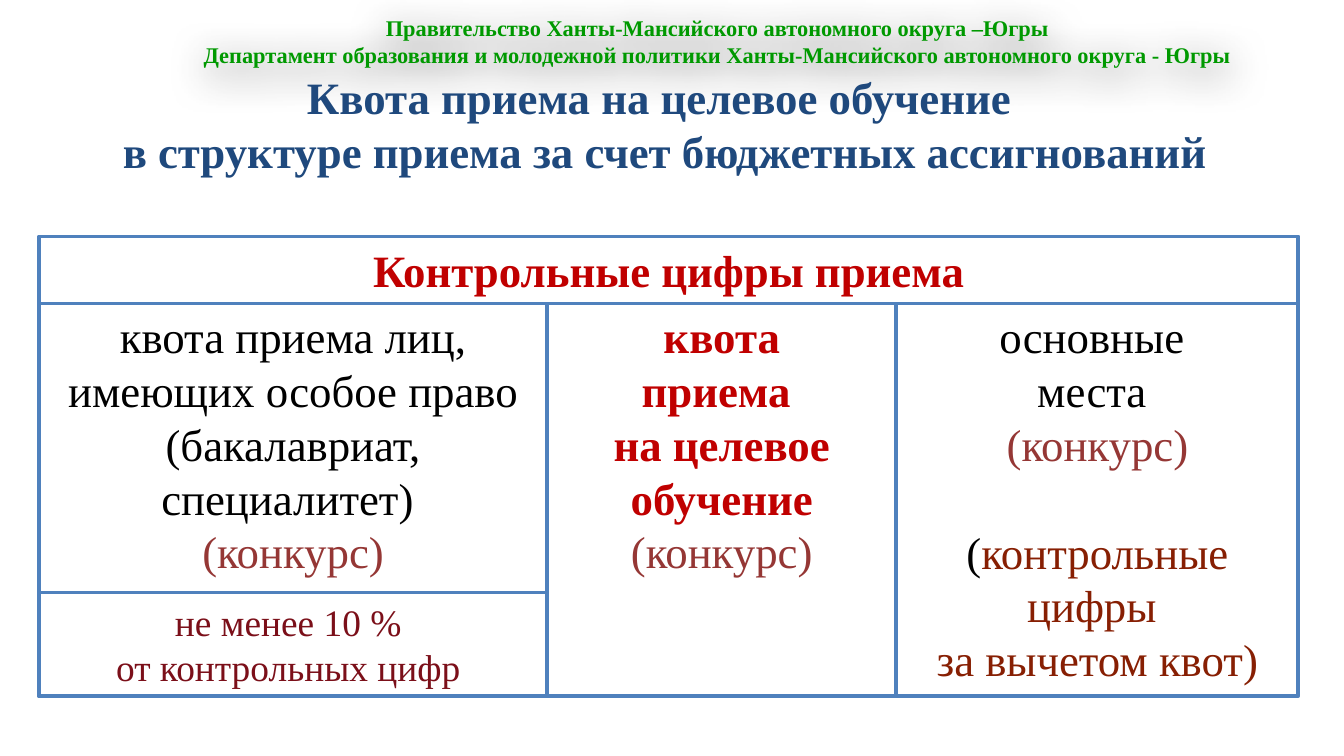
from lxml import etree
from pptx import Presentation
from pptx.dml.color import RGBColor
from pptx.enum.shapes import MSO_SHAPE
from pptx.enum.text import MSO_ANCHOR, PP_ALIGN
from pptx.oxml.ns import qn
from pptx.util import Inches, Pt

FONT = "Times New Roman"
WHITE = RGBColor(0xFF, 0xFF, 0xFF)
BLACK = RGBColor(0, 0, 0)
GREEN = RGBColor(0x00, 0x99, 0x00)
NAVY = RGBColor(0x1F, 0x49, 0x7D)
BLUE = RGBColor(0x4F, 0x81, 0xBD)
RED = RGBColor(0xC0, 0x00, 0x00)
ROSE = RGBColor(0x95, 0x37, 0x35)
BROWN = RGBColor(0x87, 0x1F, 0x03)
WINE = RGBColor(0x7B, 0x0F, 0x19)

CONTEST = [("(конкурс)", ROSE, False)]


def write(shape, lines, size=24, color=BLACK, bold=False, gaps=None):
    """Fill a shape; a line is a string or a list of (text, color, bold)."""
    frame = shape.text_frame
    frame.word_wrap = True
    frame.vertical_anchor = MSO_ANCHOR.TOP
    for index, line in enumerate(lines):
        para = frame.paragraphs[0] if index == 0 else frame.add_paragraph()
        para.alignment = PP_ALIGN.CENTER
        if gaps and index in gaps:
            para.space_before = Pt(gaps[index])
        parts = [(line, color, bold)] if isinstance(line, str) else line
        for text, tint, heavy in parts:
            run = para.add_run()
            run.text = text
            run.font.name = FONT
            run.font.size = Pt(size)
            run.font.bold = heavy
            run.font.color.rgb = tint


def add_label(slide, box, lines, **style):
    label = slide.shapes.add_textbox(*map(Inches, box))
    write(label, lines, **style)
    return label


def add_cell(slide, box, lines, **style):
    cell = slide.shapes.add_shape(MSO_SHAPE.RECTANGLE, *map(Inches, box))
    cell.shadow.inherit = False
    cell.fill.solid()
    cell.fill.fore_color.rgb = WHITE
    cell.line.color.rgb = BLUE
    cell.line.width = Pt(2)
    write(cell, lines, **style)


def add_glow(shape):
    """Soft grey shadow around the text."""
    effects = etree.SubElement(shape.element.spPr, qn("a:effectLst"))
    shadow = etree.SubElement(effects, qn("a:outerShdw"),
                              blurRad=str(Inches(0.3)), dist=str(Inches(0.06)),
                              dir="5400000", algn="ctr")
    tint = etree.SubElement(shadow, qn("a:srgbClr"), val="000000")
    etree.SubElement(tint, qn("a:alpha"), val="70000")


def add_heading(slide, box):
    left, top, width, height = box
    # Issuing bodies
    issuer = add_label(slide, (left + 0.81, top, 8.46, 0.5), [
        "Правительство Ханты-Мансийского автономного округа –Югры",
        "Департамент образования и молодежной политики "
        "Ханты-Мансийского автономного округа - Югры",
    ], size=12, color=GREEN, bold=True)
    add_glow(issuer)
    # Slide title
    add_label(slide, (left, top + 0.41, width, height - 0.41), [
        "Квота приема на целевое обучение ",
        "в структуре приема за счет бюджетных ассигнований",
    ], color=NAVY, bold=True)


def add_quotas(slide, box):
    left, top, width, height = box
    head, foot, overlap = 0.5, 0.77, 0.01
    first, second = 3.78, 2.6
    third = width - first - second
    body = top + head - overlap
    tall = height - head + overlap

    # Main places
    add_cell(slide, (left + first + second, body, third, tall), [
        "основные ", "места ", CONTEST,
        [("(", BLACK, False), ("контрольные цифры ", BROWN, False)],
        [("за вычетом квот)", BROWN, False)],
    ], gaps={3: 29})
    # Special rights quota
    add_cell(slide, (left, body, first, tall), [
        "квота приема лиц, имеющих особое право (бакалавриат, специалитет) ",
        CONTEST,
    ])
    # Targeted training quota
    add_cell(slide, (left + first, body, second, tall), [
        "квота", "приема ", "на целевое обучение", CONTEST,
    ], color=RED, bold=True)
    # Minimum share
    add_cell(slide, (left, top + height - foot, first, foot), [
        "не менее 10 % ", "от контрольных цифр ",
    ], size=20, color=WINE)
    # Common header
    add_cell(slide, (left, top, width, head), ["Контрольные цифры приема"],
             color=RED, bold=True)


def main():
    deck = Presentation()
    # Widescreen, 16:9
    deck.slide_width = Inches(10)
    deck.slide_height = deck.slide_width * 9 // 16
    slide = deck.slides.add_slide(deck.slide_layouts[6])
    add_heading(slide, (0.3, 0.06, 9.29, 0.88))
    add_quotas(slide, (0.29, 1.76, 9.37, 3.42))
    deck.save("out.pptx")


if __name__ == "__main__":
    main()
